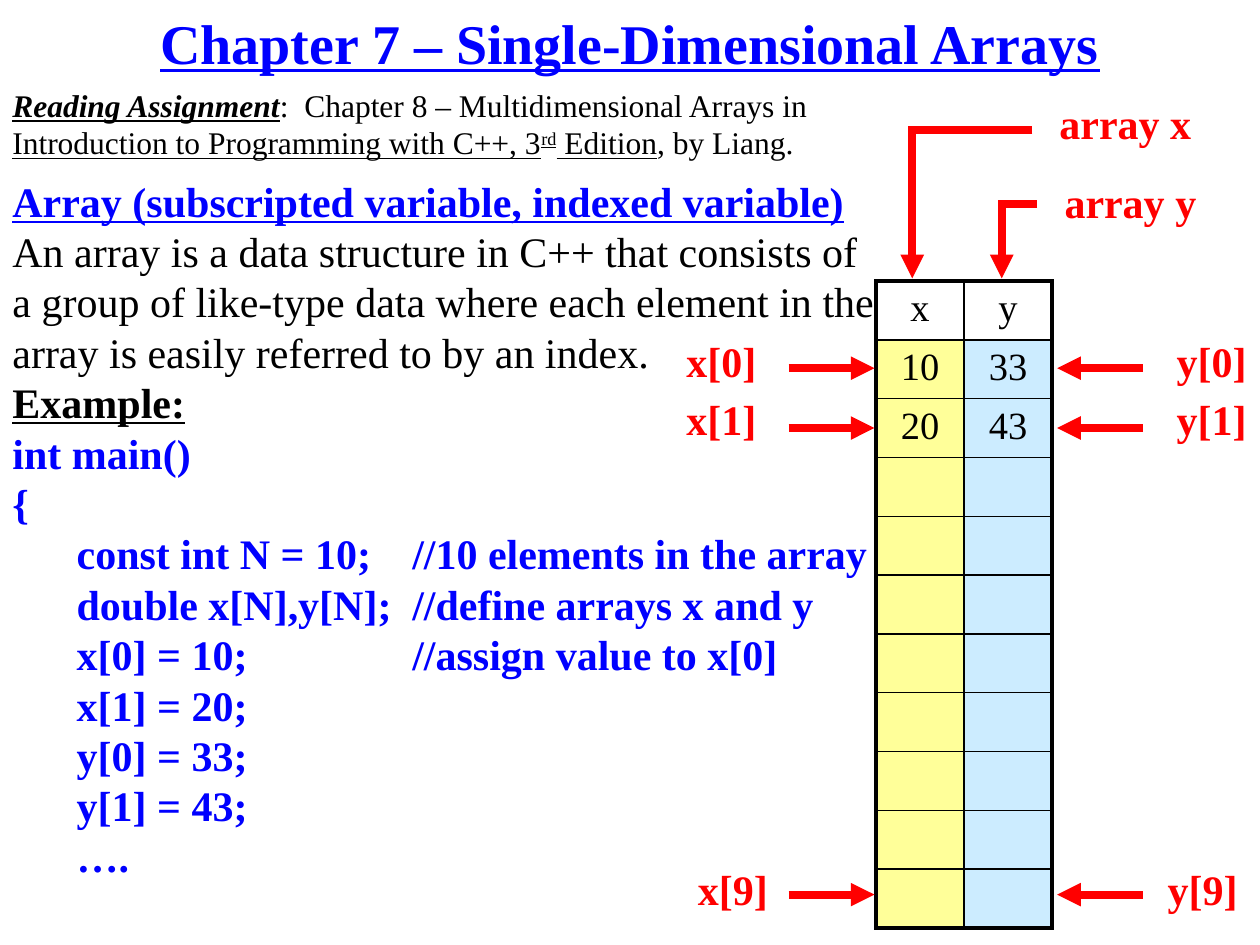
from lxml import etree
from pptx import Presentation
from pptx import util as u
from pptx.dml import color
from pptx.enum import shapes, text
from pptx.oxml import ns

BLUE, RED, BLACK, WHITE = "0000FF", "FF0000", "000000", "FFFFFF"
YELLOW, SKY = "FFFF99", "CCECFF"


def rgb(value):
    return color.RGBColor.from_string(value)


def add_node(parent, tag, **attributes):
    return etree.SubElement(parent, ns.qn(tag), attributes)


class SlideBuilder:
    font = "Times New Roman"
    thick, thin, arrow_width = 2.25, 1, 4.5

    def __init__(self, deck):
        self.slide = deck.slides.add_slide(deck.slide_layouts[6])

    def span(self, para, content, size, ink=BLACK, raised=0, **formats):
        run = para.add_run()
        run.text = content
        run.font.color.rgb = rgb(ink)
        formats = {"name": self.font, "size": u.Pt(size), **formats}
        for name, value in formats.items():
            setattr(run.font, name, value)
        if raised:
            run.font._element.set("baseline", str(raised * 1000))

    def tabs(self, para, stops):
        tab_list = add_node(para._p.get_or_add_pPr(), "a:tabLst")
        for stop in stops:
            add_node(tab_list, "a:tab", pos=str(u.Pt(stop)), algn="l")

    def box(self, left, top, width, height, paragraphs, size, stops=(),
            fill=None, frame_format=None, **para_format):
        box = self.slide.shapes.add_textbox(*map(u.Pt, (left, top, width, height)))
        if fill:
            box.fill.solid()
            box.fill.fore_color.rgb = rgb(fill)
        frame = box.text_frame
        for name, value in {"word_wrap": True, **(frame_format or {})}.items():
            setattr(frame, name, value)
        for index, spans in enumerate(paragraphs):
            para = frame.add_paragraph() if index else frame.paragraphs[0]
            for name, value in para_format.items():
                setattr(para, name, value)
            if stops:
                self.tabs(para, stops)
            for content, formats in spans:
                self.span(para, content, size, **formats)

    def label(self, content, left, top, width=54.7, fill=None):
        self.box(left, top, width, 30.2, [[(content, {"ink": RED, "bold": True})]],
                 24, fill=fill, frame_format={"word_wrap": False}, line_spacing=0.8)

    def line(self, start, end, arrow=True):
        line = self.slide.shapes.add_connector(
            shapes.MSO_CONNECTOR.STRAIGHT, *map(u.Pt, (*start, *end)))
        line.line.color.rgb = rgb(RED)
        line.line.width = u.Pt(self.arrow_width)
        if arrow:
            add_node(line.line._get_or_add_ln(), "a:tailEnd", type="triangle")
        add_node(line._element.spPr, "a:effectLst")

    def border(self, cell, side, width):
        edge = add_node(cell._tc.get_or_add_tcPr(), f"a:ln{side}", w=str(u.Pt(width)))
        add_node(add_node(edge, "a:solidFill"), "a:srgbClr", val=BLACK)

    def table(self, left, top, column_width, row_height, rows, fills, size):
        row_count, column_count = len(rows), len(fills)
        table = self.slide.shapes.add_table(
            row_count, column_count, u.Pt(left), u.Pt(top),
            u.Pt(column_width * column_count), u.Pt(row_height * row_count)).table
        table.first_row = table.horz_banding = False
        for column in table.columns:
            column.width = u.Pt(column_width)
        for r, values in enumerate(rows):
            table.rows[r].height = u.Pt(row_height)
            for c, value in enumerate(values):
                cell = table.cell(r, c)
                outer = {"L": c == 0, "R": c == column_count - 1,
                         "T": r == 0, "B": r == row_count - 1}
                for side, is_outer in outer.items():
                    self.border(cell, side, self.thick if is_outer else self.thin)
                cell.fill.solid()
                cell.fill.fore_color.rgb = rgb(fills[c] if r else WHITE)
                para = cell.text_frame.paragraphs[0]
                para.alignment = text.PP_ALIGN.CENTER
                if value:
                    self.span(para, value, size)


def main():
    deck = Presentation()
    deck.slide_width, deck.slide_height = u.Pt(720), u.Pt(540)
    page = SlideBuilder(deck)
    heading = {"ink": BLUE, "bold": True, "underline": True}
    code = {"ink": BLUE, "bold": True}
    underlined = {"underline": True}

    page.box(54, 0, 612, 48, [[("Chapter 7 – Single-Dimensional Arrays", heading)]], 32,
             frame_format={"vertical_anchor": text.MSO_ANCHOR.MIDDLE},
             alignment=text.PP_ALIGN.CENTER)

    code_lines = [
        "int main()",
        "{",
        "\tconst int N = 10;\t//10 elements in the array",
        "\tdouble x[N],y[N];\t//define arrays x and y",
        "\tx[0] = 10;\t//assign value to x[0]",
        "\tx[1] = 20;",
        "\ty[0] = 33;",
        "\ty[1] = 43;",
        "\t….",
    ]
    definition = [
        ("Array (subscripted variable, indexed variable)", heading),
        (" An array is a data structure in C++ that consists of a group of like-type "
         "data where each element in the array is easily referred to by an index.", {}),
    ]
    example = [("Example:", {"bold": True, "underline": True})]
    page.box(0, 96.5, 510.5, 443.5,
             [definition, example] + [[(line, code)] for line in code_lines],
             24, stops=(36.7, 228.5))

    left, top, column_width, row_height = 500.6, 160.6, 50.3, 33.6
    rows = [("x", "y"), ("10", "33"), ("20", "43")] + [("", "")] * 8
    page.table(left, top, column_width, row_height, rows, (YELLOW, SKY), 22)

    page.label("array x", 598.3, 57.6, 90)
    page.label("array y", 601.2, 103, 90)
    for start, corner, end in [((590, 74.2), (521.3, 74.2), (521.3, 159.1)),
                               ((592.6, 116.6), (572.4, 116.6), (572.4, 159.1))]:
        page.line(corner, end)
        page.line(start, (corner[0] - 2.25, corner[1]), arrow=False)

    for index, x_left, y_left, label_top, arrow_top in [
            (0, 385.2, 665.3, 193.7, 210.4),
            (1, 385.2, 665.3, 226.8, 244.6),
            (9, 391.7, 660.2, 495.7, 511.2)]:
        page.label(f"x[{index}]", x_left, label_top)
        page.label(f"y[{index}]", y_left, label_top, fill=WHITE)
        page.line((450.7, arrow_top), (499.7, arrow_top))
        page.line((653, arrow_top), (604.1, arrow_top))

    page.box(0, 45.4, 499.7, 51.1, [[
        ("Reading Assignment", {"bold": True, "italic": True, "underline": True}),
        (":  Chapter 8 – Multidimensional Arrays in ", {}),
        ("Introduction to Programming with C++, 3", underlined),
        ("rd", {"raised": 30, **underlined}),
        (" Edition", underlined),
        (", by Liang.", {}),
    ]], 18)

    deck.save("out.pptx")


if __name__ == "__main__":
    main()
